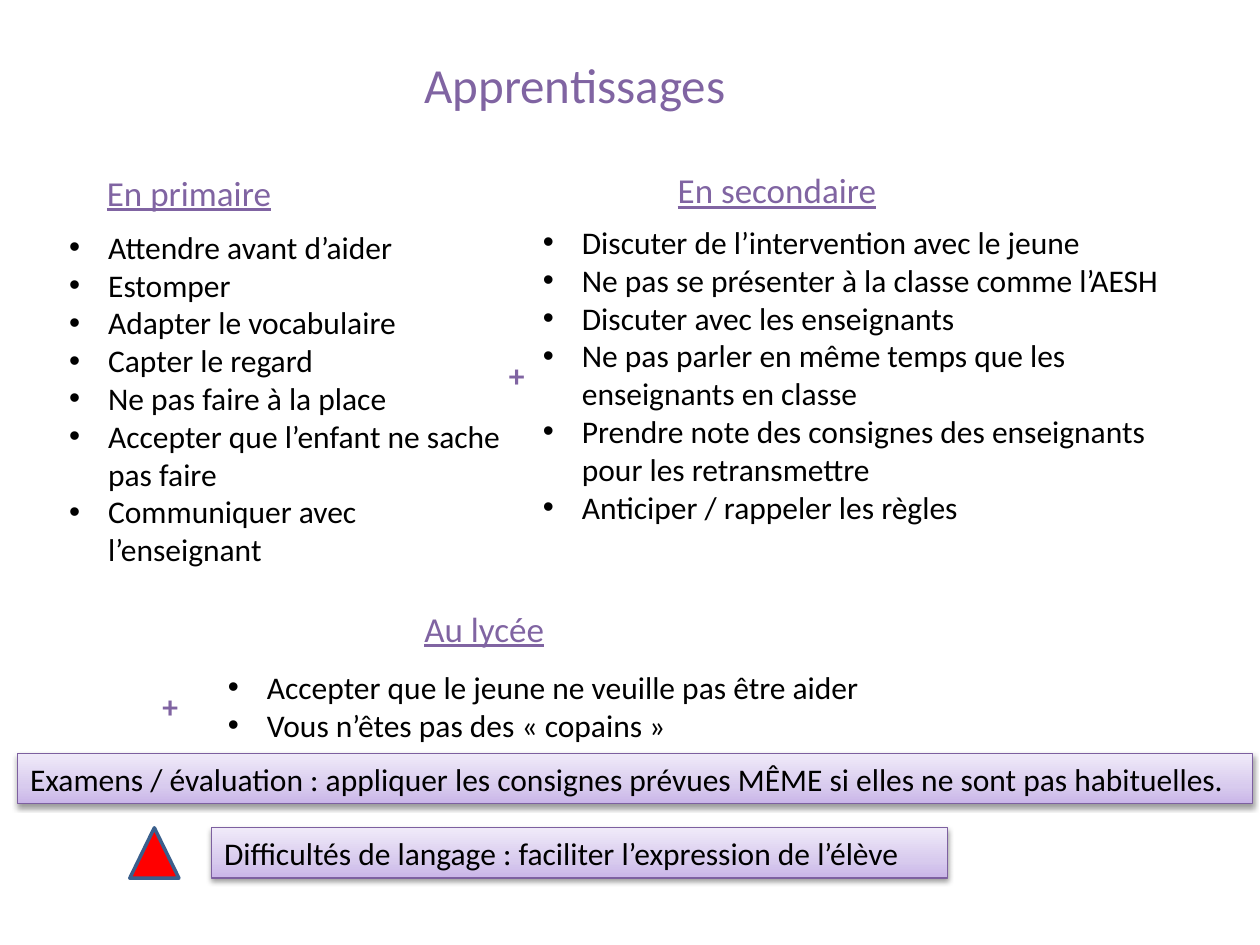
from pptx import Presentation
from pptx.dml.color import RGBColor
from pptx.enum.shapes import MSO_SHAPE as Shape
from pptx.enum.text import MSO_ANCHOR as Anchor, MSO_AUTO_SIZE as AutoSize, PP_ALIGN as Align
from pptx.oxml import parse_xml
from pptx.oxml.ns import nsdecls
from pptx.util import Inches, Pt

FONT = "Calibri"
PURPLE, BLACK = "8064A2", "000000"
BANNER_STOPS = [(0, "C9B5E8"), (35, "D8CBEE"), (100, "F0EAF9")]
BULLET_INDENT = Inches(0.31)

PRIMARY = [
    "Attendre avant d’aider",
    "Estomper",
    "Adapter le vocabulaire",
    "Capter le regard",
    "Ne pas faire à la place",
    "Accepter que l’enfant ne sache pas faire",
    "Communiquer avec l’enseignant",
]
SECONDARY = [
    "Discuter de l’intervention avec le jeune",
    "Ne pas se présenter à la classe comme l’AESH",
    "Discuter avec les enseignants",
    "Ne pas parler en même temps que les enseignants en classe",
    "Prendre note des consignes des enseignants pour les retransmettre",
    "Anticiper / rappeler les règles",
]
HIGH_SCHOOL = [
    "Accepter que le jeune ne veuille pas être aider",
    "Vous n’êtes pas des « copains »",
]


def color(hex_value):
    return RGBColor.from_string(hex_value)


def inches(box):
    return [Inches(value) for value in box]


def add_run(paragraph, text, size=18, ink=BLACK, bold=None, underline=None):
    paragraph.alignment = Align.LEFT
    run = paragraph.add_run()
    run.text = text
    font = run.font
    font.name, font.size = FONT, Pt(size)
    font.bold, font.underline = bold, underline
    font.color.rgb = color(ink)


def add_text_frame(slide, box):
    frame = slide.shapes.add_textbox(*inches(box)).text_frame
    frame.word_wrap = True
    frame.auto_size = AutoSize.SHAPE_TO_FIT_TEXT
    return frame


def add_label(slide, box, text, size=18, **style):
    frame = add_text_frame(slide, box)
    add_run(frame.paragraphs[0], text, size, PURPLE, **style)


def add_bullets(slide, box, items):
    frame = add_text_frame(slide, box)
    for index, item in enumerate(items):
        paragraph = frame.add_paragraph() if index else frame.paragraphs[0]
        add_run(paragraph, item)
        properties = paragraph._p.get_or_add_pPr()
        properties.set("marL", str(BULLET_INDENT))
        properties.set("indent", str(-BULLET_INDENT))
        properties.append(parse_xml(f'<a:buFont {nsdecls("a")} typeface="Arial"/>'))
        properties.append(parse_xml(f'<a:buChar {nsdecls("a")} char="•"/>'))


def add_banner(slide, box, text):
    banner = slide.shapes.add_shape(Shape.RECTANGLE, *inches(box))
    banner.line.color.rgb = color("7D60A0")
    banner.line.width = Pt(0.75)
    banner.shadow.inherit = False

    # Upward gradient and soft shadow below
    stops = "".join(
        f'<a:gs pos="{position * 1000}"><a:srgbClr val="{tint}"/></a:gs>'
        for position, tint in BANNER_STOPS
    )
    properties = banner._element.spPr
    properties.insert(2, parse_xml(
        f'<a:gradFill {nsdecls("a")} rotWithShape="1"><a:gsLst>{stops}</a:gsLst>'
        '<a:lin ang="16200000" scaled="0"/></a:gradFill>'))
    properties[-1].append(parse_xml(
        f'<a:outerShdw {nsdecls("a")} blurRad="{Pt(3.1)}" dist="{Pt(1.6)}"'
        ' dir="5400000" rotWithShape="0"><a:srgbClr val="000000">'
        '<a:alpha val="38000"/></a:srgbClr></a:outerShdw>'))

    frame = banner.text_frame
    frame.word_wrap = True
    frame.auto_size = AutoSize.SHAPE_TO_FIT_TEXT
    frame.vertical_anchor = Anchor.TOP
    add_run(frame.paragraphs[0], text)


def add_warning_triangle(slide, box):
    triangle = slide.shapes.add_shape(Shape.ISOSCELES_TRIANGLE, *inches(box))
    triangle.shadow.inherit = False
    triangle.fill.solid()
    triangle.fill.fore_color.rgb = color("FF0000")
    triangle.line.color.rgb = color("3A5F8C")
    triangle.line.width = Pt(2)


def main():
    deck = Presentation()
    deck.slide_width, deck.slide_height = Inches(10), Inches(7.5)
    slide = deck.slides.add_slide(deck.slide_layouts[6])

    # Title and level headings
    add_label(slide, (3.27, 0.38, 2.83, 0.57), "Apprentissages", 28)
    for box, heading in [
        ((0.75, 1.31, 1.65, 0.44), "En primaire"),
        ((5.28, 1.29, 2.08, 0.44), "En secondaire"),
        ((3.27, 4.77, 1.34, 0.44), "Au lycée"),
    ]:
        add_label(slide, box, heading, 20, underline=True)

    # Advice for each level
    add_bullets(slide, (0.45, 1.76, 3.62, 3.13), PRIMARY)
    add_bullets(slide, (4.21, 1.72, 5.28, 2.52), SECONDARY)
    add_bullets(slide, (1.71, 5.25, 6.18, 0.71), HIGH_SCHOOL)

    # Key reminders
    add_banner(slide, (0.14, 5.98, 9.8, 0.4),
               "Examens / évaluation : appliquer les consignes prévues MÊME"
               " si elles ne sont pas habituelles.")
    add_banner(slide, (1.68, 6.57, 5.84, 0.4),
               "Difficultés de langage : faciliter l’expression de l’élève")
    add_warning_triangle(slide, (1.03, 6.57, 0.39, 0.4))

    # Plus signs linking the levels
    for box in [(3.94, 2.78, 0.43, 0.4), (1.19, 5.4, 0.38, 0.4)]:
        add_label(slide, box, "+", bold=True)

    deck.save("out.pptx")


if __name__ == "__main__":
    main()
